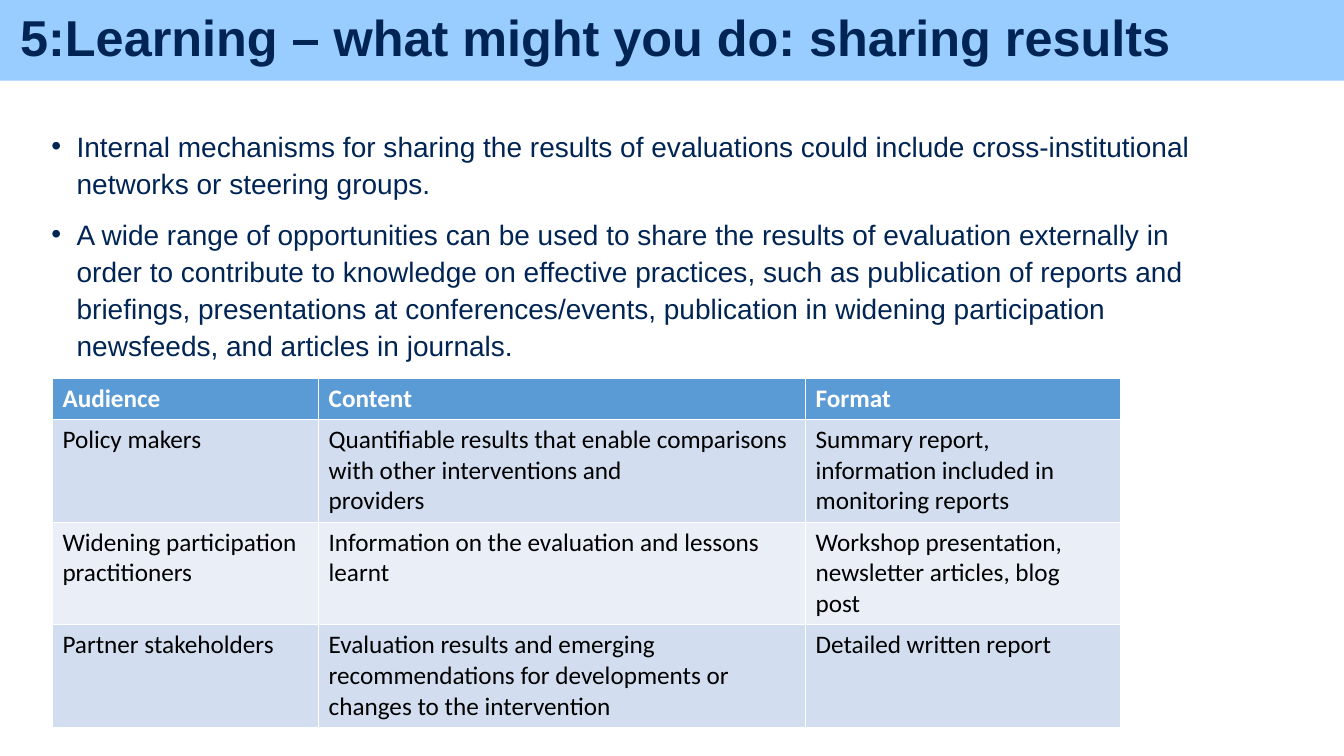
from pptx import Presentation
from pptx.dml.color import RGBColor
from pptx.enum.text import MSO_ANCHOR, MSO_AUTO_SIZE, PP_ALIGN
from pptx.oxml.ns import qn
from pptx.util import Inches, Pt
from lxml import etree

LEFT, MIDDLE, TOP = PP_ALIGN.LEFT, MSO_ANCHOR.MIDDLE, MSO_ANCHOR.TOP
NO_FIT = MSO_AUTO_SIZE.NONE

# Content
TITLE = "5:Learning – what might you do: sharing results"
BULLETS = [
    "Internal mechanisms for sharing the results of evaluations could include "
    "cross-institutional networks or steering groups.",
    "A wide range of opportunities can be used to share the results of evaluation "
    "externally in order to contribute to knowledge on effective practices, such as "
    "publication of reports and briefings, presentations at conferences/events, "
    "publication in widening participation newsfeeds, and articles in journals.",
]
AUDIENCES = [
    ("Audience", "Content", "Format"),
    ("Policy makers",
     "Quantifiable results that enable comparisons with other interventions and\nproviders",
     "Summary report, information included in monitoring reports"),
    ("Widening participation\npractitioners",
     "Information on the evaluation and lessons learnt",
     "Workshop presentation, newsletter articles, blog post"),
    ("Partner stakeholders",
     "Evaluation results and emerging recommendations for developments or "
     "changes to the intervention",
     "Detailed written report"),
]
COL_WIDTHS = (2.64, 4.83, 3.12)
HEADER_H, ROW_H = 0.41, 1.02


class Theme:
    navy = RGBColor.from_string("002554")
    banner = RGBColor.from_string("99CCFF")
    header = RGBColor.from_string("5B9BD5")
    bands = (RGBColor.from_string("D2DEEF"), RGBColor.from_string("EAEFF7"))
    white = RGBColor.from_string("FFFFFF")
    black = RGBColor.from_string("000000")
    text_font, table_font = "Arial", "Calibri"
    title_size, body_size, table_size = Pt(36), Pt(20), Pt(18)


def place(sp, left, top, width, height):
    sp.left, sp.top = Inches(left), Inches(top)
    sp.width, sp.height = Inches(width), Inches(height)


def set_frame(tf, anchor, left_inset=0):
    tf.word_wrap = True
    tf.auto_size = NO_FIT
    tf.vertical_anchor = anchor
    tf.margin_left = Inches(left_inset)
    tf.margin_top = tf.margin_right = tf.margin_bottom = 0


def set_font(p, name, size, color, bold=False):
    p.font.name, p.font.size, p.font.bold = name, size, bold
    p.font.color.rgb = color


def add_bullet(p, indent):
    pPr = p._p.get_or_add_pPr()
    pPr.set("marL", str(Inches(indent)))
    pPr.set("indent", str(-Inches(indent)))
    font = etree.Element(qn("a:buFont"), typeface="Arial")
    char = etree.Element(qn("a:buChar"), char="•")
    pPr.insert_element_before(font, "a:buChar", "a:tabLst", "a:defRPr", "a:extLst")
    pPr.insert_element_before(char, "a:tabLst", "a:defRPr", "a:extLst")


prs = Presentation()
prs.slide_width, prs.slide_height = Inches(13.33), Inches(7.5)
s = prs.slides.add_slide(prs.slide_layouts[1])

# Title banner
title = s.shapes.title
place(title, 0, 0, 13.33, 0.8)
title.fill.solid()
title.fill.fore_color.rgb = Theme.banner
set_frame(title.text_frame, MIDDLE, 0.2)
title.text_frame.text = TITLE
p = title.text_frame.paragraphs[0]
p.alignment, p.line_spacing = LEFT, 0.9
set_font(p, Theme.text_font, Theme.title_size, Theme.navy, bold=True)

# Bulleted body
body = s.placeholders[1]
place(body, 0.51, 1.25, 11.76, 6.05)
set_frame(body.text_frame, TOP)
body.text_frame.text = "\n".join(BULLETS)
for p in body.text_frame.paragraphs:
    p.line_spacing, p.space_before = Pt(26.4), Pt(10)
    set_font(p, Theme.text_font, Theme.body_size, Theme.navy)
    add_bullet(p, 0.25)

# Audience table
table_h = HEADER_H + ROW_H * (len(AUDIENCES) - 1)
table = s.shapes.add_table(len(AUDIENCES), len(COL_WIDTHS), Inches(0.52), Inches(3.75),
                           Inches(sum(COL_WIDTHS)), Inches(table_h)).table
for column, width in zip(table.columns, COL_WIDTHS):
    column.width = Inches(width)
for r, texts in enumerate(AUDIENCES):
    is_header = r == 0
    table.rows[r].height = Inches(HEADER_H if is_header else ROW_H)
    for c, text in enumerate(texts):
        cell = table.cell(r, c)
        cell.text = text
        cell.fill.solid()
        cell.fill.fore_color.rgb = Theme.header if is_header else Theme.bands[(r - 1) % 2]
        for p in cell.text_frame.paragraphs:
            set_font(p, Theme.table_font, Theme.table_size,
                     Theme.white if is_header else Theme.black, bold=is_header)

prs.save("out.pptx")
